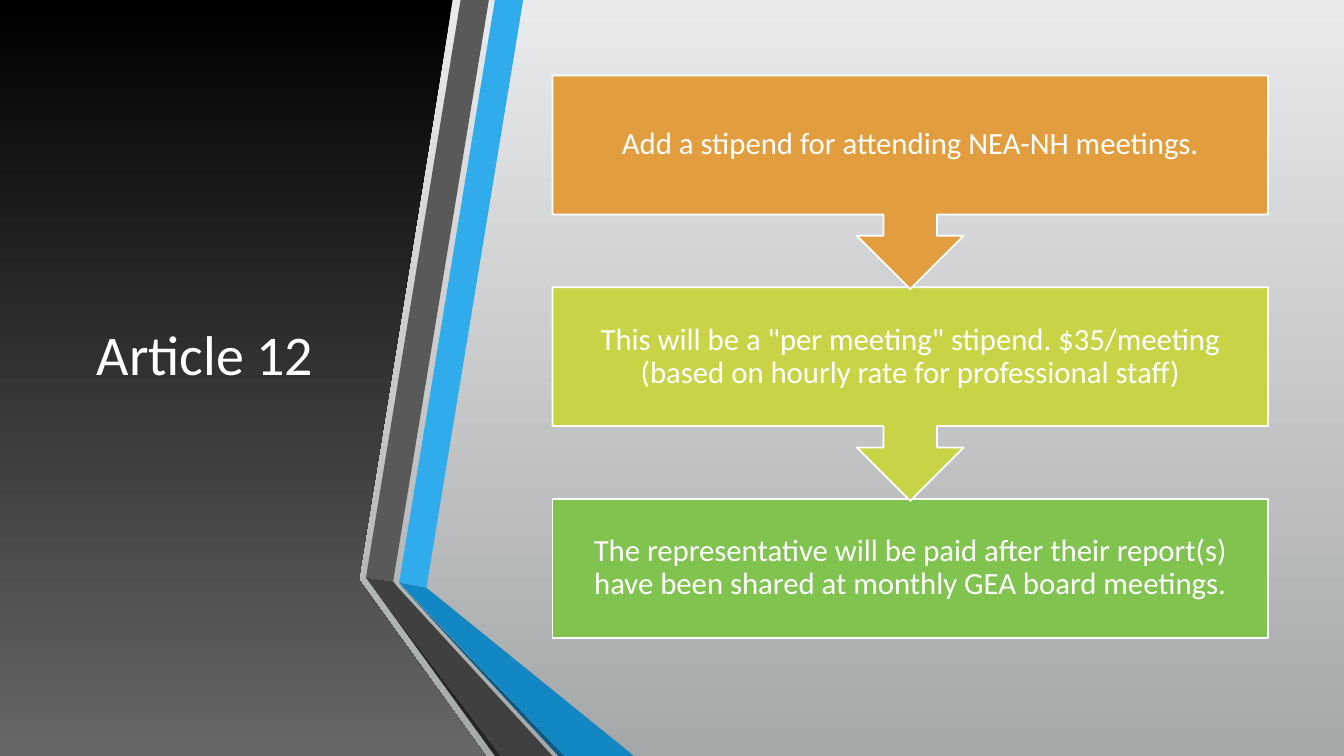
"""Build the Article 12 slide: a dark title panel, folded ribbons and a three-step flow."""
from pptx import Presentation
from pptx.dml.color import RGBColor
from pptx.enum.shapes import MSO_SHAPE
from pptx.enum.text import MSO_ANCHOR, PP_ALIGN
from pptx.util import Pt

COLORS = {
    "white": "FFFFFF",
    "black": "000000",
    "panel_end": "676767",
    "light": "E9EAEB",
    "silver": "A5A8A9",
    "blue": "30ACEC",
    "blue_fold": "1287C3",
    "blue_shade": "0C5A82",
    "gray": "595959",
    "gray_fold": "404040",
    "gray_shade": "262626",
    "orange": "E29D3E",
    "lime": "C8D346",
    "green": "80C34F",
}

WIDTH, HEIGHT = 960, 540

PANEL = [(0, 0), (323.3, 0), (256.3, 414), (347, HEIGHT), (0, HEIGHT)]

RIBBONS = [
    ("blue", [(285.1, 416.2), (304.6, 419.8), (373.7, 0), (353.5, 0)]),
    ("gray", [(349.2, 0), (329, 0), (261.4, 412.6), (280.8, 415.4)]),
    ("gray_shade", [(261.4, 412.6), (353.5, HEIGHT), (357.8, HEIGHT)]),
    ("blue_shade", [(285.1, 416.9), (398.9, HEIGHT), (403.2, HEIGHT)]),
    ("blue_fold", [(285.1, 416.2), (403.2, HEIGHT), (452.9, HEIGHT), (304.6, 419.8)]),
    ("gray_fold", [(261.4, 412.6), (357.8, HEIGHT), (394.6, HEIGHT), (284.4, 419.8), (280.8, 415.4)]),
]

STEPS = [
    ("orange", "Add a stipend for attending NEA-NH meetings."),
    ("lime", 'This will be a "per meeting" stipend. $35/meeting (based on hourly rate for professional staff)'),
    ("green", "The representative will be paid after their report(s) have been shared at monthly GEA board meetings."),
]
STEP_LEFT, STEP_TOP, STEP_WIDTH, STEP_PITCH = 394.6, 54, 511.2, 151.2
BOX_HEIGHT, CALLOUT_HEIGHT = 99.2, 152.6


class SlideBuilder:
    """Hold the font, the colours and the slide being drawn."""

    def __init__(self, slide, font_name, colors):
        self.slide = slide
        self.font_name = font_name
        self.colors = colors

    def color(self, name):
        return RGBColor.from_string(self.colors[name])

    def gradient(self, fill, top, bottom):
        fill.gradient()
        fill.gradient_angle = 270
        for stop, name, position in zip(fill.gradient_stops, (top, bottom), (0, 1)):
            stop.color.rgb = self.color(name)
            stop.position = position

    def solid(self, fill, name):
        fill.solid()
        fill.fore_color.rgb = self.color(name)

    def polygon(self, points):
        start, *others = [(Pt(x), Pt(y)) for x, y in points]
        builder = self.slide.shapes.build_freeform(*start)
        builder.add_line_segments(others, close=True)
        shape = builder.convert_to_shape()
        shape.shadow.inherit = False
        shape.line.fill.background()
        return shape

    def label(self, shape, text, size, inset, spacing):
        frame = shape.text_frame
        frame.text = text
        frame.word_wrap = True
        frame.vertical_anchor = MSO_ANCHOR.MIDDLE
        frame.margin_left = frame.margin_right = Pt(inset)
        frame.margin_top = frame.margin_bottom = Pt(inset)
        for paragraph in frame.paragraphs:
            paragraph.alignment = PP_ALIGN.CENTER
            paragraph.line_spacing = spacing
            for run in paragraph.runs:
                run.font.name = self.font_name
                run.font.size = Pt(size)
                run.font.color.rgb = self.color("white")

    def title(self, text, left, top, width, height):
        box = self.slide.shapes.add_textbox(Pt(left), Pt(top), Pt(width), Pt(height))
        self.label(box, text, 40, 7.2, 0.9)

    def step(self, kind, color, text, top, height):
        shape = self.slide.shapes.add_shape(
            kind, Pt(STEP_LEFT), Pt(top), Pt(STEP_WIDTH), Pt(height)
        )
        shape.shadow.inherit = False
        self.solid(shape.fill, color)
        shape.line.color.rgb = self.color("white")
        shape.line.width = Pt(1.25)
        self.label(shape, text, 22, 12.2, 0.9)


def main():
    presentation = Presentation()
    presentation.slide_width, presentation.slide_height = Pt(WIDTH), Pt(HEIGHT)
    slide = presentation.slides.add_slide(presentation.slide_layouts[6])
    builder = SlideBuilder(slide, "Calibri", COLORS)

    builder.gradient(slide.background.fill, "light", "silver")
    builder.gradient(builder.polygon(PANEL).fill, "black", "panel_end")
    builder.title("Article 12", 42.5, 54, 208, 401.8)
    for color, points in RIBBONS:
        builder.solid(builder.polygon(points).fill, color)

    last = len(STEPS) - 1
    for index, (color, text) in reversed(list(enumerate(STEPS))):
        if index == last:
            kind, height = MSO_SHAPE.RECTANGLE, BOX_HEIGHT
        else:
            kind, height = MSO_SHAPE.DOWN_ARROW_CALLOUT, CALLOUT_HEIGHT
        builder.step(kind, color, text, STEP_TOP + index * STEP_PITCH, height)

    presentation.save("out.pptx")


if __name__ == "__main__":
    main()
